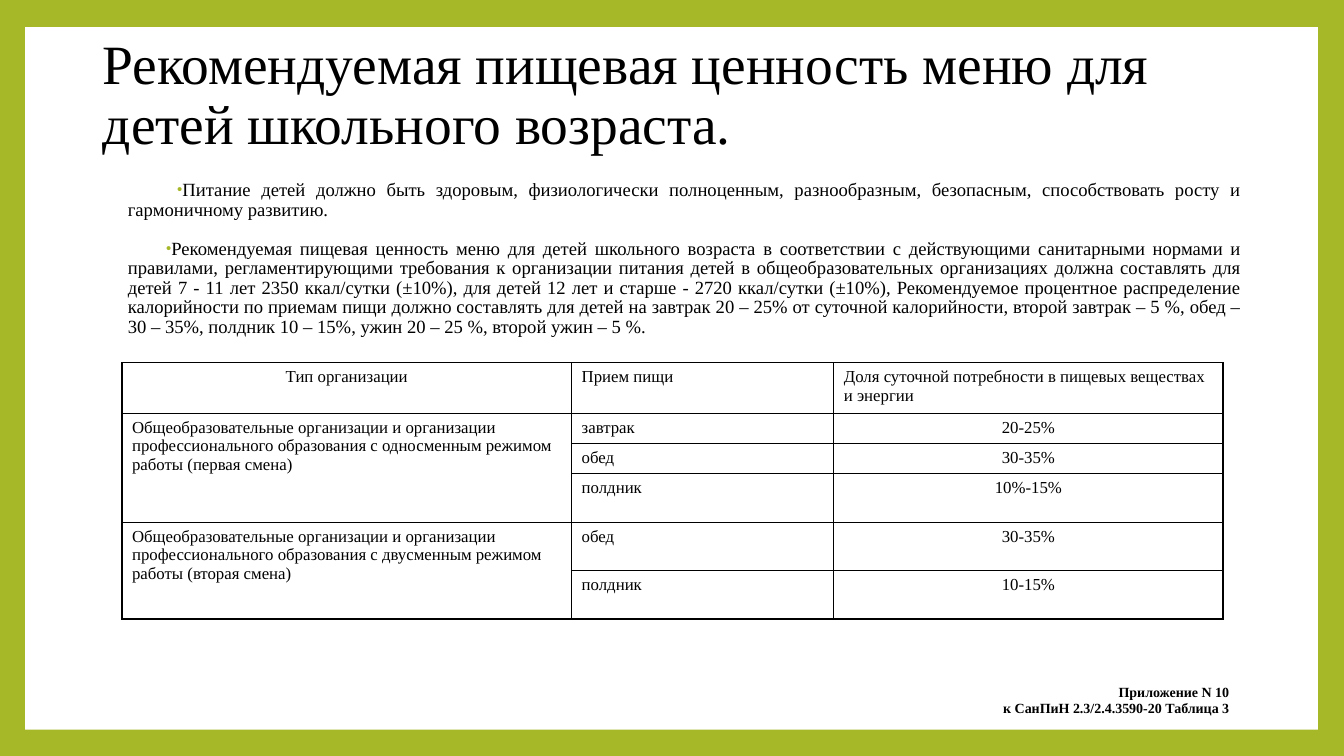
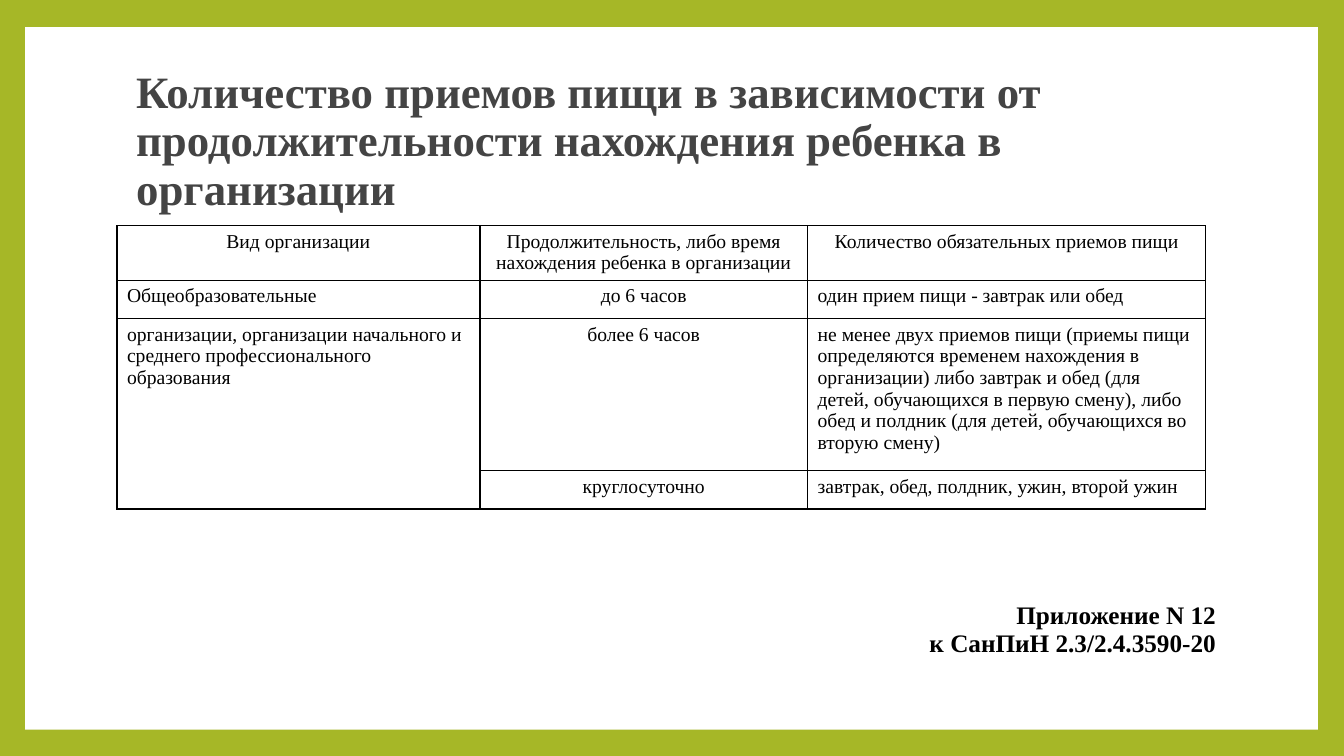
from lxml import etree
from pptx import Presentation
from pptx import util as u
from pptx.dml import color
from pptx.enum import shapes, text
from pptx.oxml import ns

Inches = u.Inches
FONT = "Times New Roman"
COLORS = {"frame": "A6B727", "panel": "FFFFFF", "ink": "000000", "heading": "444444"}
ALIGN = {"l": text.PP_ALIGN.LEFT, "c": text.PP_ALIGN.CENTER,
         "r": text.PP_ALIGN.RIGHT, "j": text.PP_ALIGN.JUSTIFY}


def rgb(name):
    return color.RGBColor.from_string(COLORS[name])


def lengths(values):
    return [Inches(value) for value in values]


def style(para, size, align="l", ink="ink", bold=False):
    para.alignment = ALIGN[align]
    para.font.name = FONT
    para.font.size = u.Pt(size)
    para.font.bold = bold
    para.font.color.rgb = rgb(ink)


def add_child(parent, tag, **attributes):
    return etree.SubElement(parent, ns.qn(tag), attributes)


def set_bullet(para, indent):
    props = para._p.get_or_add_pPr()
    props.set("marL", str(Inches(0.25)))
    props.set("indent", str(Inches(indent)))
    add_child(add_child(props, "a:buClr"), "a:srgbClr", val=COLORS["frame"])
    add_child(props, "a:buSzPct", val="80000")
    add_child(props, "a:buFont", typeface="Arial")
    add_child(props, "a:buChar", char="•")


def set_borders(cell, visible):
    props = cell._tc.get_or_add_tcPr()
    for index, side in enumerate(("a:lnL", "a:lnR", "a:lnT", "a:lnB")):
        line = add_child(props, side, w=str(u.Pt(1)))
        if visible:
            add_child(add_child(line, "a:solidFill"), "a:srgbClr", val=COLORS["ink"])
        else:
            add_child(line, "a:noFill")
        props.insert(index, line)


def set_background(deck):
    fill = deck.slide_master.background.fill
    fill.solid()
    fill.fore_color.rgb = rgb("frame")


def add_page(deck):
    slide = deck.slides.add_slide(deck.slide_layouts[5])
    panel = slide.shapes.add_shape(shapes.MSO_SHAPE.RECTANGLE,
                                   *lengths((0.25, 0.27, 12.82, 6.97)))
    panel.shadow.inherit = False
    panel.fill.solid()
    panel.fill.fore_color.rgb = rgb("panel")
    panel.line.fill.background()
    slide.shapes._spTree.insert(2, panel._element)
    return slide


def place_title(slide, box, words, size, ink="ink", bold=False):
    title = slide.shapes.title
    title.left, title.top, title.width, title.height = lengths(box)
    frame = title.text_frame
    frame.text = words
    frame.word_wrap = True
    frame.auto_size = text.MSO_AUTO_SIZE.NONE
    frame.vertical_anchor = text.MSO_ANCHOR.MIDDLE
    para = frame.paragraphs[0]
    para.line_spacing = 0.9
    style(para, size, ink=ink, bold=bold)


def add_body(slide, box, items):
    frame = slide.shapes.add_textbox(*lengths(box)).text_frame
    frame.word_wrap = True
    for index, (indent, words) in enumerate(items):
        para = frame.add_paragraph() if index else frame.paragraphs[0]
        para.text = words
        para.line_spacing = 0.87
        para.space_before = u.Pt(14 if index else 0)
        style(para, 13.3, "j")
        set_bullet(para, indent)


def add_grid(slide, corner, widths, heights, rows, size, merges=(), bold=False, borders=True):
    box = (*corner, sum(widths), sum(heights))
    table = slide.shapes.add_table(len(rows), len(widths), *lengths(box)).table
    table.first_row = table.horz_banding = False
    for column, width in zip(table.columns, widths):
        column.width = Inches(width)
    for row, height, entries in zip(table.rows, heights, rows):
        row.height = Inches(height)
        for cell, (align, words) in zip(row.cells, entries):
            cell.text = words
            style(cell.text_frame.paragraphs[0], size, align, bold=bold)
            cell.fill.background()
            set_borders(cell, borders)
    for first, last in merges:
        table.cell(first, 0).merge(table.cell(last, 0))


def add_reference(slide, corner, width, height, words, size):
    add_grid(slide, corner, [width], [height], [[("r", words)]], size, bold=True, borders=False)


def build_nutrition(slide):
    place_title(slide, (0.92, 0.4, 11.5, 1.11),
                "Рекомендуемая пищевая ценность меню для детей школьного возраста.", 39.6)
    add_body(slide, (0.92, 1.75, 11.5, 1.85), [
        (0.49, "Питание детей должно быть здоровым, физиологически полноценным, разнообразным, "
               "безопасным, способствовать росту и гармоничному развитию."),
        (0.38, "Рекомендуемая пищевая ценность меню для детей школьного возраста в соответствии с "
               "действующими санитарными нормами и правилами, регламентирующими требования к "
               "организации питания детей в общеобразовательных организациях должна составлять для "
               "детей 7 - 11 лет 2350 ккал/сутки (±10%), для детей 12 лет и старше - 2720 ккал/сутки "
               "(±10%), Рекомендуемое процентное распределение калорийности по приемам пищи должно "
               "составлять для детей на завтрак 20 – 25% от суточной калорийности, второй завтрак – "
               "5 %, обед – 30 – 35%, полдник 10 – 15%, ужин 20 – 25 %, второй ужин – 5 %."),
    ])
    add_reference(slide, (9.72, 6.75), 2.57, 0.45,
                  "Приложение N 10\vк СанПиН 2.3/2.4.3590-20 Таблица 3", 10)
    school = "Общеобразовательные организации и организации профессионального образования с "
    meals = [
        (school + "односменным режимом работы (первая смена)", "завтрак", "20-25%"),
        ("", "обед", "30-35%"),
        ("", "полдник", "10%-15%"),
        (school + "двусменным режимом работы (вторая смена)", "обед", "30-35%"),
        ("", "полдник", "10-15%"),
    ]
    header = [("c", "Тип организации"), ("l", "Прием пищи"),
              ("l", "Доля суточной потребности в пищевых веществах и энергии")]
    rows = [header] + [list(zip("llc", meal)) for meal in meals]
    add_grid(slide, (1.21, 3.6), [4.46, 2.6, 3.86], [0.45, 0.27, 0.27, 0.48, 0.48, 0.48],
             rows, 12, merges=[(1, 3), (4, 5)])


def build_meal_count(slide):
    place_title(slide, (1.25, 0.67, 10.8, 1.48),
                "Количество приемов пищи в зависимости от продолжительности нахождения ребенка "
                "в организации", 32, "heading", True)
    add_reference(slide, (9.01, 5.92), 3.15, 0.7,
                  "Приложение N 12\vк СанПиН 2.3/2.4.3590-20", 18)
    header = ("Вид организации", "Продолжительность, либо время нахождения ребенка в организации",
              "Количество обязательных приемов пищи")
    stays = [
        ("Общеобразовательные", "до 6 часов", "один прием пищи - завтрак или обед"),
        ("организации, организации начального и среднего профессионального образования",
         "более 6 часов",
         "не менее двух приемов пищи (приемы пищи определяются временем нахождения в организации) "
         "либо завтрак и обед (для детей, обучающихся в первую смену), либо обед и полдник "
         "(для детей, обучающихся во вторую смену)"),
        ("", "круглосуточно", "завтрак, обед, полдник, ужин, второй ужин"),
    ]
    rows = [list(zip("ccc", header))] + [list(zip("lcl", stay)) for stay in stays]
    add_grid(slide, (1.16, 2.24), [3.6, 3.25, 3.95], [0.54, 0.38, 1.51, 0.38],
             rows, 14, merges=[(2, 3)])


def main():
    deck = Presentation()
    deck.slide_width, deck.slide_height = lengths((13.33, 7.5))
    set_background(deck)
    build_nutrition(add_page(deck))
    build_meal_count(add_page(deck))
    deck.save("out.pptx")


if __name__ == "__main__":
    main()
